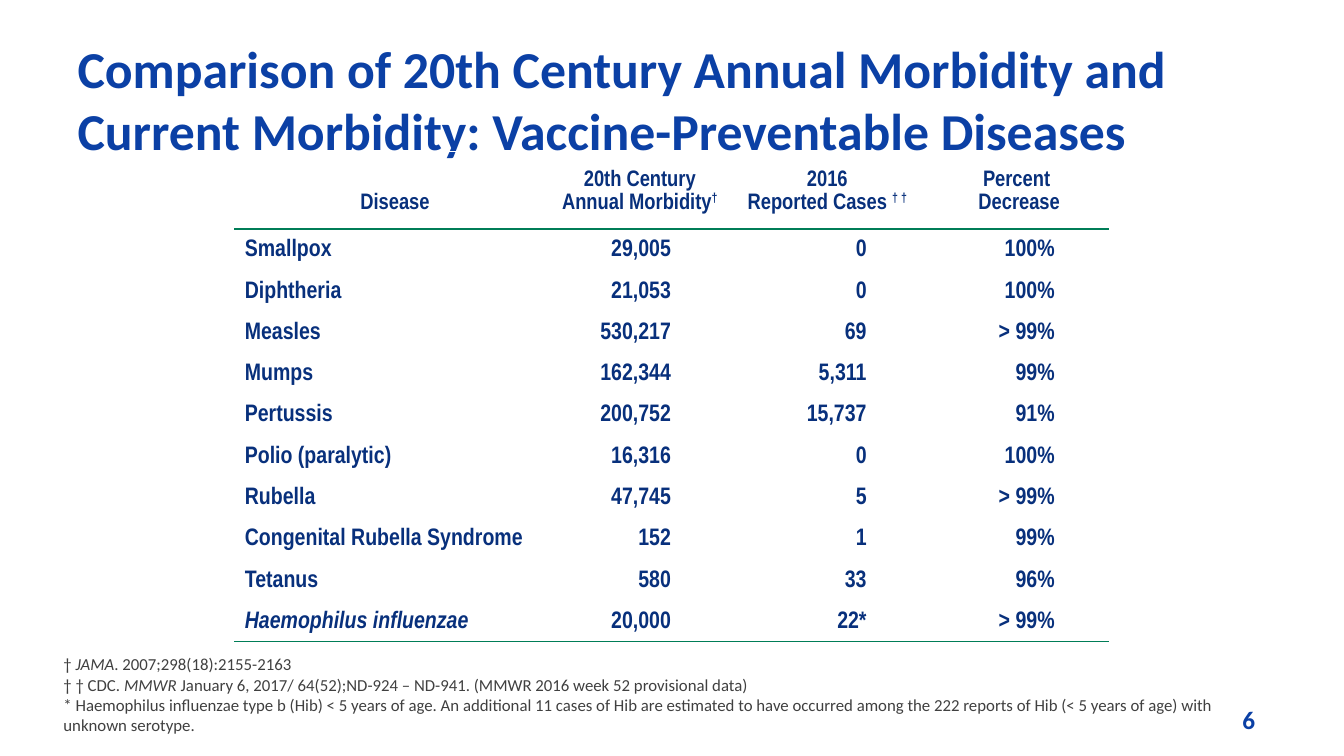
"""Build the slide comparing 20th century and current morbidity."""
import pptx
import pptx.dml.color
import pptx.enum.text
import pptx.oxml
import pptx.oxml.ns
import pptx.util

Cm = pptx.util.Cm
Pt = pptx.util.Pt
RGBColor = pptx.dml.color.RGBColor
ALIGN = pptx.enum.text.PP_ALIGN
ANCHOR = pptx.enum.text.MSO_ANCHOR

BLUE = RGBColor(0x0B, 0x40, 0xA5)
NAVY = RGBColor(0x08, 0x30, 0x7C)
GREEN = RGBColor(0x00, 0x7D, 0x57)
GREY = RGBColor(0x40, 0x40, 0x40)
HEADING_FONT = "Calibri"
TABLE_FONT = "Arial Narrow"

TITLE = ("Comparison of 20th Century Annual Morbidity and "
         "Current Morbidity: Vaccine-Preventable Diseases")
COLUMN_WIDTHS = [7.82, 4.52, 4.93, 4.74]
HEADER_HEIGHT = 1.96
ROW_HEIGHT = 1.04
HEADERS = [
    [[("Disease", "")]],
    [[("20th Century", "")], [("Annual Morbidity", ""), ("†", "super")]],
    [[("2016", "")], [("Reported Cases ", ""), ("† †", "super")]],
    [[("Percent \vDecrease", "")]],
]
DISEASES = [
    ("Smallpox", "29,005", "0", "100%"),
    ("Diphtheria", "21,053", "0", "100%"),
    ("Measles", "530,217", "69", "> 99%"),
    ("Mumps", "162,344", "5,311", "99%"),
    ("Pertussis", "200,752", "15,737", "91%"),
    ("Polio (paralytic)", "16,316", "0", "100%"),
    ("Rubella", "47,745", "5", "> 99%"),
    ("Congenital Rubella Syndrome", "152", "1", "99%"),
    ("Tetanus", "580", "33", "96%"),
    ("Haemophilus influenzae", "20,000", "22*", "> 99%"),
]
FOOTNOTES = [
    [("† ", ""), ("JAMA", "italic"), (". 2007;298(18):2155-2163", "")],
    [("† † CDC. ", ""), ("MMWR", "italic"),
     (" January 6, 2017/ 64(52);ND-924 – ND-941. "
      "(MMWR 2016 week 52 provisional data)", "")],
    [("* Haemophilus influenzae type b (Hib) < 5 years of age. "
      "An additional 11 cases of Hib are estimated to have occurred among "
      "the 222 reports of Hib (< 5 years of age) with unknown serotype.", "")],
]


def add_run(p, text, font, size, color, bold, style):
    """Append one formatted run to a paragraph."""
    r = p.add_run()
    r.text = text
    r.font.name = font
    r.font.size = Pt(size)
    r.font.color.rgb = color
    r.font.bold = bold
    r.font.italic = style == "italic"
    if style == "super":
        r._r.get_or_add_rPr().set("baseline", "30000")


def fill_text(tf, paragraphs, font, size, color, bold=False,
              align=ALIGN.LEFT, spacing=None):
    """Write paragraphs, each a list of (text, style) runs."""
    for i, runs in enumerate(paragraphs):
        p = tf.paragraphs[0] if i == 0 else tf.add_paragraph()
        p.alignment = align
        p.line_spacing = spacing
        for text, style in runs:
            for j, part in enumerate(text.split("\v")):
                if j:
                    p.add_line_break()
                add_run(p, part, font, size, color, bold, style)


def add_title(slide):
    """Place and format the title placeholder."""
    sp = slide.shapes.title
    sp.left, sp.top, sp.width, sp.height = Cm(1.7), Cm(0.76), Cm(30.48), Cm(3.3)
    tf = sp.text_frame
    tf.word_wrap = True
    tf.auto_size = pptx.enum.text.MSO_AUTO_SIZE.NONE
    tf.vertical_anchor = ANCHOR.BOTTOM
    tf.margin_bottom = 0
    fill_text(tf, [[(TITLE, "")]], HEADING_FONT, 37, BLUE, bold=True)


def add_text_box(slide, left, top, width, height, paragraphs, **style):
    """Add a wrapping text box."""
    sp = slide.shapes.add_textbox(Cm(left), Cm(top), Cm(width), Cm(height))
    sp.text_frame.word_wrap = True
    fill_text(sp.text_frame, paragraphs, HEADING_FONT, **style)


def add_border(cell, side):
    """Draw a green line on one side of a cell."""
    ns = pptx.oxml.ns.nsdecls("a")
    line = pptx.oxml.parse_xml(
        f'<a:{side} {ns} w="{Pt(1)}"><a:solidFill><a:srgbClr val="{GREEN}"/>'
        f'</a:solidFill></a:{side}>')
    cell._tc.get_or_add_tcPr().insert(0, line)


def format_cell(cell, paragraphs, size, align, anchor, right, bottom):
    """Fill a table cell with text and set its margins."""
    cell.fill.background()
    cell.vertical_anchor = anchor
    cell.margin_left, cell.margin_top = Cm(0.25), Cm(0.13)
    cell.margin_right, cell.margin_bottom = Cm(right), Cm(bottom)
    fill_text(cell.text_frame, paragraphs, TABLE_FONT, size, NAVY, bold=True,
              align=align, spacing=1.1)


def add_morbidity_table(slide):
    """Add the table of diseases with its green rules."""
    height = HEADER_HEIGHT + ROW_HEIGHT * len(DISEASES)
    frame = slide.shapes.add_table(
        len(DISEASES) + 1, len(COLUMN_WIDTHS),
        Cm(5.92), Cm(3.81), Cm(sum(COLUMN_WIDTHS)), Cm(height))
    table = frame.table
    table.first_row = table.horz_banding = False
    for column, width in zip(table.columns, COLUMN_WIDTHS):
        column.width = Cm(width)
    for i, row in enumerate(table.rows):
        row.height = Cm(ROW_HEIGHT if i else HEADER_HEIGHT)
    for c, header in enumerate(HEADERS):
        cell = table.cell(0, c)
        format_cell(cell, header, 16, ALIGN.CENTER, ANCHOR.BOTTOM, 0, 0.38)
        add_border(cell, "lnB")
        add_border(table.cell(1, c), "lnT")
        add_border(table.cell(len(DISEASES), c), "lnB")
    for i, values in enumerate(DISEASES, start=1):
        for c, value in enumerate(values):
            style = "italic" if value == "Haemophilus influenzae" else ""
            align, right = (ALIGN.RIGHT, 1.35) if c else (ALIGN.LEFT, 0)
            format_cell(table.cell(i, c), [[(value, style)]], 17, align,
                        ANCHOR.MIDDLE, right, 0.13)


def main():
    """Build and save the slide."""
    prs = pptx.Presentation()
    prs.slide_width, prs.slide_height = Cm(33.87), Cm(19.05)
    slide = prs.slides.add_slide(prs.slide_layouts[5])
    add_title(slide)
    add_morbidity_table(slide)
    add_text_box(slide, 1.35, 16.36, 30.84, 2.31, FOOTNOTES,
                 size=12, color=GREY)
    add_text_box(slide, 31.06, 17.63, 2.4, 1.02, [[("6", "")]],
                 size=18, color=BLUE, bold=True)
    prs.save("out.pptx")


if __name__ == "__main__":
    main()
